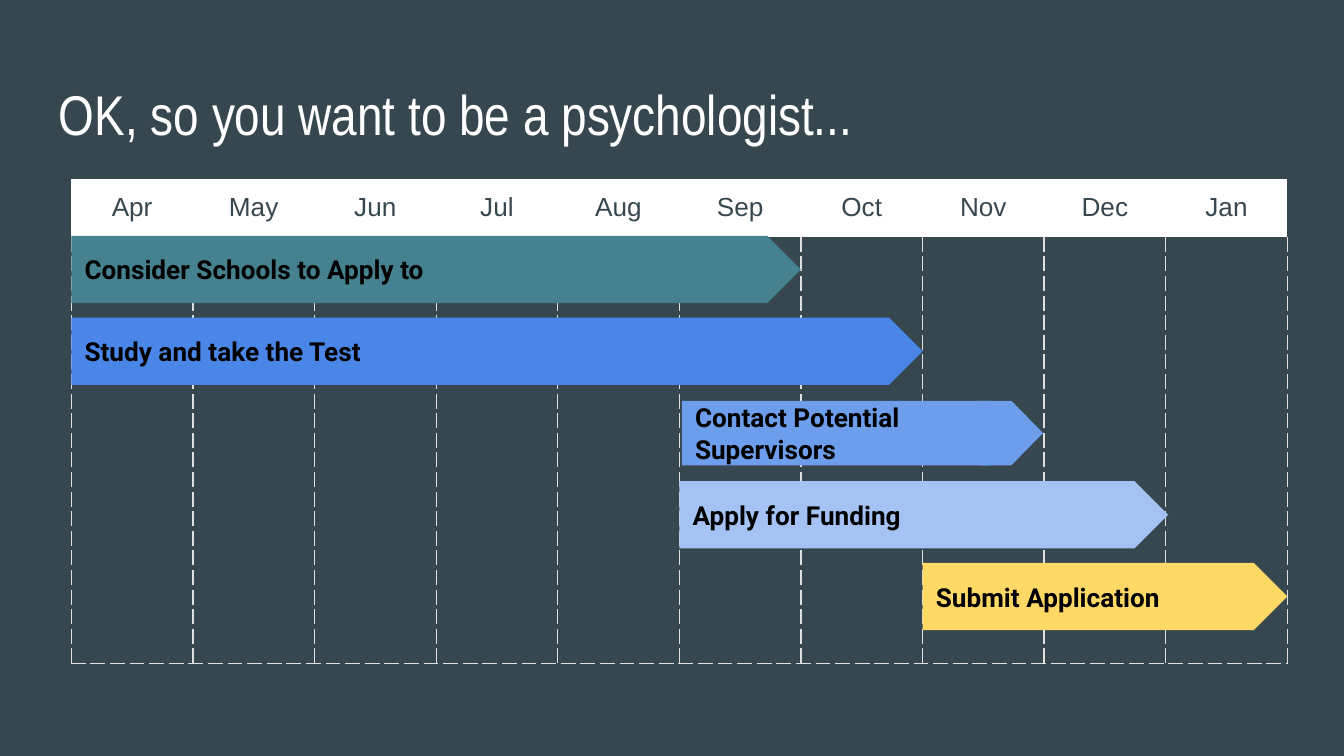
"""Build a slide with a ten-month plan of steps towards a psychology degree."""
from typing import NamedTuple

from lxml.etree import SubElement
from pptx import Presentation
from pptx.dml.color import RGBColor
from pptx.enum.shapes import MSO_SHAPE
from pptx.enum.text import MSO_ANCHOR, PP_ALIGN
from pptx.oxml.ns import qn
from pptx.util import Pt

SLATE = RGBColor(0x37, 0x47, 0x4F)
WHITE = RGBColor(0xFF, 0xFF, 0xFF)
BLACK = RGBColor(0x00, 0x00, 0x00)
GREY = RGBColor(0xE0, 0xE0, 0xE0)
TEAL = RGBColor(0x45, 0x81, 0x8E)
BLUE = RGBColor(0x4A, 0x86, 0xE8)
SKY = RGBColor(0x6D, 0x9E, 0xEB)
PALE = RGBColor(0xA4, 0xC2, 0xF4)
GOLD = RGBColor(0xFF, 0xD9, 0x66)

MONTHS = "Apr May Jun Jul Aug Sep Oct Nov Dec Jan".split()
LEFT, TOP, COL = 38.2, 95.9, 65.15
HEAD, BODY = 31, 228.6
LANE, STEP, TALL = 126.4, 43.8, 36
PLAIN = "{2D5ABB26-0587-4C30-8999-92F81FD0307C}"

TITLE = {"name": "Arial Narrow", "size": Pt(30)}
MONTH = {"name": "Arial", "size": Pt(14)}
LABEL = {"name": "Roboto", "size": Pt(14), "bold": True}
INSET = {f"margin_{side}": Pt(7.2) for side in ("left", "right", "top", "bottom")}


class Bar(NamedTuple):
    lane: int
    start: float
    span: float
    color: RGBColor
    text: str = ""
    tall: float = TALL
    kind: MSO_SHAPE = MSO_SHAPE.PENTAGON


BARS = [
    Bar(4, 7, 3, GOLD, "Submit Application"),
    Bar(1, 0, 7, BLUE, "Study and take the Test"),
    Bar(2, 5.02, 2.8, SKY, "Contact Potential Supervisors", 34.6),
    Bar(2, 7.47, 0.52, SKY, "", 34.6, MSO_SHAPE.CHEVRON),
    Bar(3, 5, 4.02, PALE, "Apply for Funding"),
    Bar(0, 0, 6, TEAL, "Consider Schools to Apply to"),
]


def assign(item, values: dict) -> None:
    """Set each named attribute of an item."""
    for name, value in values.items():
        setattr(item, name, value)


def write(frame, text: str, style: dict, color: RGBColor, align=PP_ALIGN.LEFT) -> None:
    """Put one styled line of text in a frame."""
    para = frame.paragraphs[0]
    para.alignment = align
    run = para.add_run()
    run.text = text
    assign(run.font, style)
    run.font.color.rgb = color


def edge(cell) -> None:
    """Draw dashed lines on the left, right and bottom of a cell."""
    props = cell._tc.get_or_add_tcPr()
    for side in ("lnL", "lnR", "lnB"):
        line = SubElement(props, qn(f"a:{side}"), w=str(Pt(0.75)))
        fill = SubElement(line, qn("a:solidFill"))
        SubElement(fill, qn("a:srgbClr"), val=str(GREY))
        SubElement(line, qn("a:prstDash"), val="dash")


def add_grid(slide) -> None:
    """Add the month table."""
    size = Pt(COL * len(MONTHS)), Pt(HEAD + BODY)
    frame = slide.shapes.add_table(2, len(MONTHS), Pt(LEFT), Pt(TOP), *size)
    table = frame.table
    assign(table, {"first_row": False, "horz_banding": False})
    table._tbl.tblPr.find(qn("a:tableStyleId")).text = PLAIN
    for row, tall in zip(table.rows, (HEAD, BODY)):
        row.height = Pt(tall)
    for col, month in enumerate(MONTHS):
        table.columns[col].width = Pt(COL)
        head, body = table.cell(0, col), table.cell(1, col)
        assign(head, INSET)
        head.fill.solid()
        head.fill.fore_color.rgb = WHITE
        write(head.text_frame, month, MONTH, SLATE, PP_ALIGN.CENTER)
        edge(body)
        body.fill.background()


def add_bar(slide, bar: Bar) -> None:
    """Add one bar, centred in its lane."""
    top = LANE + bar.lane * STEP + (TALL - bar.tall) / 2
    shape = slide.shapes.add_shape(
        bar.kind, Pt(LEFT + bar.start * COL), Pt(top), Pt(bar.span * COL), Pt(bar.tall)
    )
    shape.shadow.inherit = False
    shape.fill.solid()
    shape.fill.fore_color.rgb = bar.color
    shape.line.fill.background()
    if bar.text:
        frame = shape.text_frame
        assign(frame, INSET | {"word_wrap": True, "vertical_anchor": MSO_ANCHOR.MIDDLE})
        write(frame, bar.text, LABEL, BLACK)


def add_title(slide) -> None:
    """Add the slide title."""
    box = slide.shapes.add_textbox(Pt(24.5), Pt(35.3), Pt(671), Pt(45.4))
    assign(box.text_frame, INSET | {"word_wrap": True})
    write(box.text_frame, "OK, so you want to be a psychologist...", TITLE, WHITE)


def main() -> None:
    """Build and save the slide."""
    deck = Presentation()
    assign(deck, {"slide_width": Pt(720), "slide_height": Pt(405)})
    slide = deck.slides.add_slide(deck.slide_layouts[6])
    slide.background.fill.solid()
    slide.background.fill.fore_color.rgb = SLATE
    add_grid(slide)
    add_title(slide)
    for bar in BARS:
        add_bar(slide, bar)
    deck.save("out.pptx")


if __name__ == "__main__":
    main()
